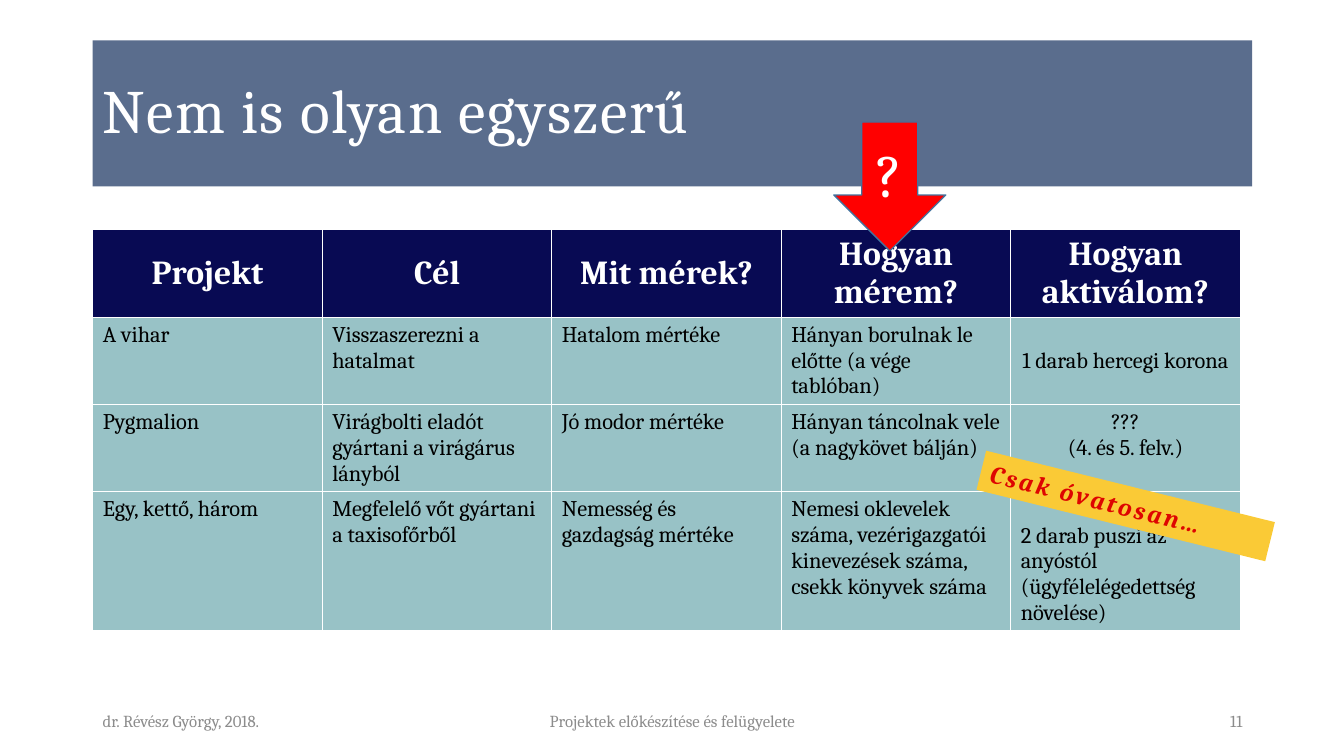
from lxml.etree import SubElement
from pptx import Presentation
from pptx.dml.color import RGBColor
from pptx.enum.shapes import MSO_SHAPE as Shape
from pptx.enum.text import MSO_ANCHOR as Anchor, PP_ALIGN as Align
from pptx.oxml.ns import qn
from pptx.util import Pt

EMU_PER_PX = 9144  # 100 px to the inch
FONT = "Cambria"
WHITE, BLACK, GREY = "FFFFFF", "000000", "8C8C8C"
SLATE, NAVY, TEAL = "5A6D8D", "080A53", "98C2C6"
YELLOW, RED, DARK_RED, BLUE = "FACA36", "FF0000", "DE0501", "43739E"


def px(*lengths):
    return [length * EMU_PER_PX for length in lengths]


def color(hex_string):
    return RGBColor.from_string(hex_string)


class SlideBuilder:
    def __init__(self, presentation):
        self.slide = presentation.slides.add_slide(presentation.slide_layouts[6])

    def fill_text(self, frame, text, size, text_color, align=Align.LEFT,
                  bold=False, italic=False, spacing=0, line_spacing=None):
        frame.word_wrap = True
        for index, line in enumerate(text.split("\n")):
            paragraph = frame.paragraphs[0] if index == 0 else frame.add_paragraph()
            paragraph.alignment = align
            paragraph.line_spacing = line_spacing
            font = paragraph.font
            font.name, font.size = FONT, Pt(size)
            font.bold, font.italic = bold, italic
            font.color.rgb = color(text_color)
            run = paragraph.add_run()
            run.text = line
            if spacing:
                run._r.get_or_add_rPr().set("spc", str(spacing * 100))

    def label(self, box, text, align):
        frame = self.slide.shapes.add_textbox(*px(*box)).text_frame
        frame.vertical_anchor = Anchor.MIDDLE
        self.fill_text(frame, text, 12, GREY, align)

    def shape(self, kind, box, fill, text, size, text_color, line=None,
              rotation=0, anchor=Anchor.MIDDLE, **style):
        shape = self.slide.shapes.add_shape(kind, *px(*box))
        shape.shadow.inherit = False
        shape.rotation = rotation
        shape.fill.solid()
        shape.fill.fore_color.rgb = color(fill)
        if line:
            shape.line.color.rgb = color(line)
            shape.line.width = Pt(1)
        else:
            shape.line.fill.background()
        shape.text_frame.vertical_anchor = anchor
        self.fill_text(shape.text_frame, text, size, text_color, **style)

    def table(self, box, rows, row_heights, special_cells):
        table = self.slide.shapes.add_table(len(rows), len(rows[0]), *px(*box)).table
        table.horz_banding = False
        for r, (texts, height) in enumerate(zip(rows, px(*row_heights))):
            table.rows[r].height = height
            for c, text in enumerate(texts):
                cell = table.cell(r, c)
                header = r == 0
                align, anchor, top = special_cells.get((r, c), (Align.LEFT, Anchor.TOP, 5))
                if header:
                    align, anchor = Align.CENTER, Anchor.MIDDLE
                self.borders(cell)
                cell.fill.solid()
                cell.fill.fore_color.rgb = color(NAVY if header else TEAL)
                cell.vertical_anchor = anchor
                cell.margin_top = px(top)[0]
                self.fill_text(cell.text_frame, text, 24 if header else 16,
                               WHITE if header else BLACK, align, bold=header)

    def borders(self, cell):
        properties = cell._tc.get_or_add_tcPr()
        for side in ("lnL", "lnR", "lnT", "lnB"):
            line = SubElement(properties, qn("a:" + side), w=str(Pt(1)))
            fill = SubElement(line, qn("a:solidFill"))
            SubElement(fill, qn("a:srgbClr"), val=WHITE)


PROJECTS = [
    ["Projekt", "Cél", "Mit mérek?", "Hogyan mérem?", "Hogyan aktiválom?"],
    ["A vihar", "Visszaszerezni a hatalmat", "Hatalom mértéke",
     "Hányan borulnak le előtte (a vége tablóban)", "1 darab hercegi korona"],
    ["Pygmalion", "Virágbolti eladót gyártani a virágárus lányból",
     "Jó modor mértéke", "Hányan táncolnak vele (a nagykövet bálján)",
     "???\n(4. és 5. felv.)"],
    ["Egy, kettő, három", "Megfelelő vőt gyártani a taxisofőrből",
     "Nemesség és gazdagság mértéke",
     "Nemesi oklevelek száma, vezérigazgatói kinevezések száma, csekk könyvek száma",
     "2 darab puszi az anyóstól (ügyfélelégedettség növelése)"],
]
# Alignment, anchor and top margin of the cells that differ
SPECIAL_CELLS = {
    (1, 4): (Align.CENTER, Anchor.MIDDLE, 5),
    (2, 4): (Align.CENTER, Anchor.TOP, 5),
    (3, 4): (Align.LEFT, Anchor.TOP, 31),
}


def main():
    presentation = Presentation()
    presentation.slide_width, presentation.slide_height = px(1333, 750)
    builder = SlideBuilder(presentation)

    # Title band
    builder.shape(Shape.RECTANGLE, (92, 40, 1150, 145), SLATE, "Nem is olyan egyszerű",
                  44, WHITE, spacing=1, line_spacing=0.9)

    # Project table
    builder.table((92, 228, 1138, 396), PROJECTS, (86, 86, 86, 138), SPECIAL_CELLS)

    # Warning banner and question arrow
    builder.shape(Shape.RECTANGLE, (969, 482, 295, 40), YELLOW, "Csak óvatosan…",
                  18, DARK_RED, rotation=13.9, anchor=Anchor.TOP,
                  bold=True, italic=True, spacing=2)
    builder.shape(Shape.DOWN_ARROW, (827, 121, 111, 128), RED, "?", 44, WHITE,
                  line=BLUE, align=Align.CENTER)

    # Footer
    builder.label((92, 695, 300, 40), "dr. Révész György, 2018.", Align.LEFT)
    builder.label((442, 695, 450, 40), "Projektek előkészítése és felügyelete", Align.CENTER)
    builder.label((942, 695, 300, 40), "11", Align.RIGHT)

    presentation.save("out.pptx")


if __name__ == "__main__":
    main()
